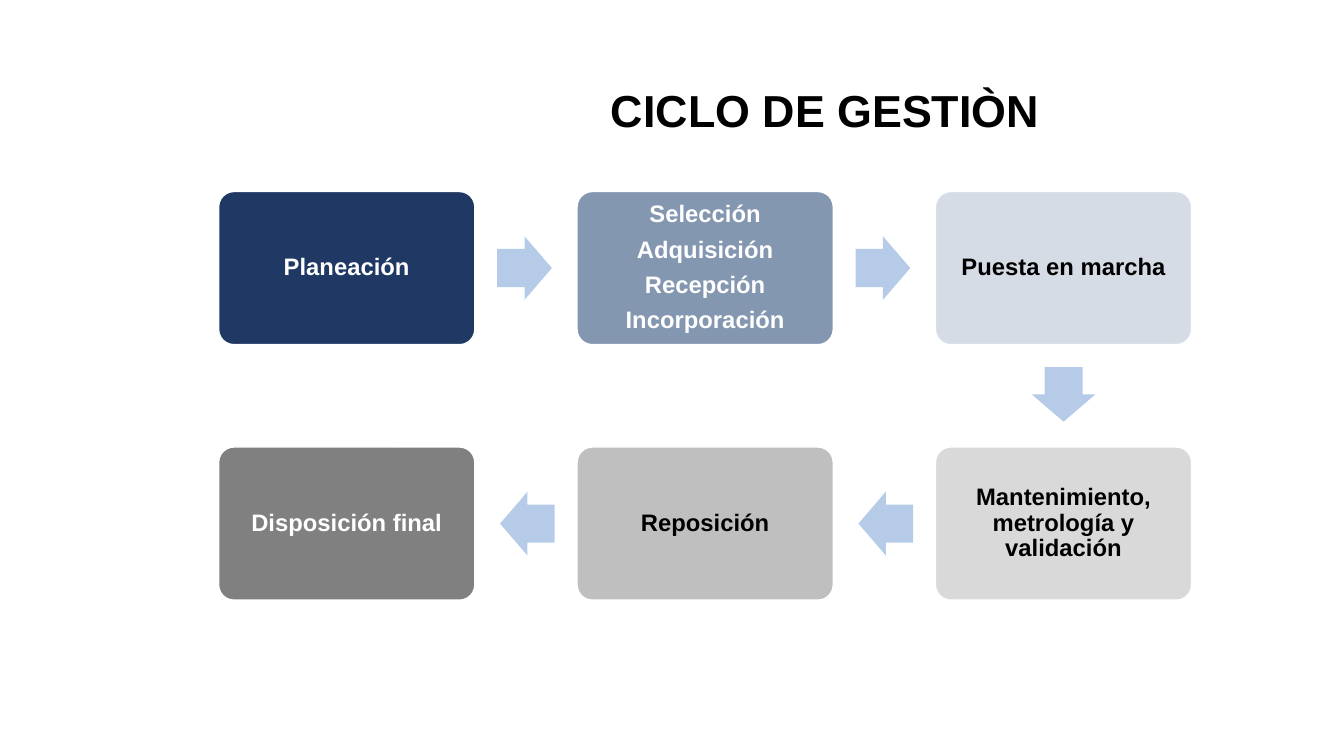
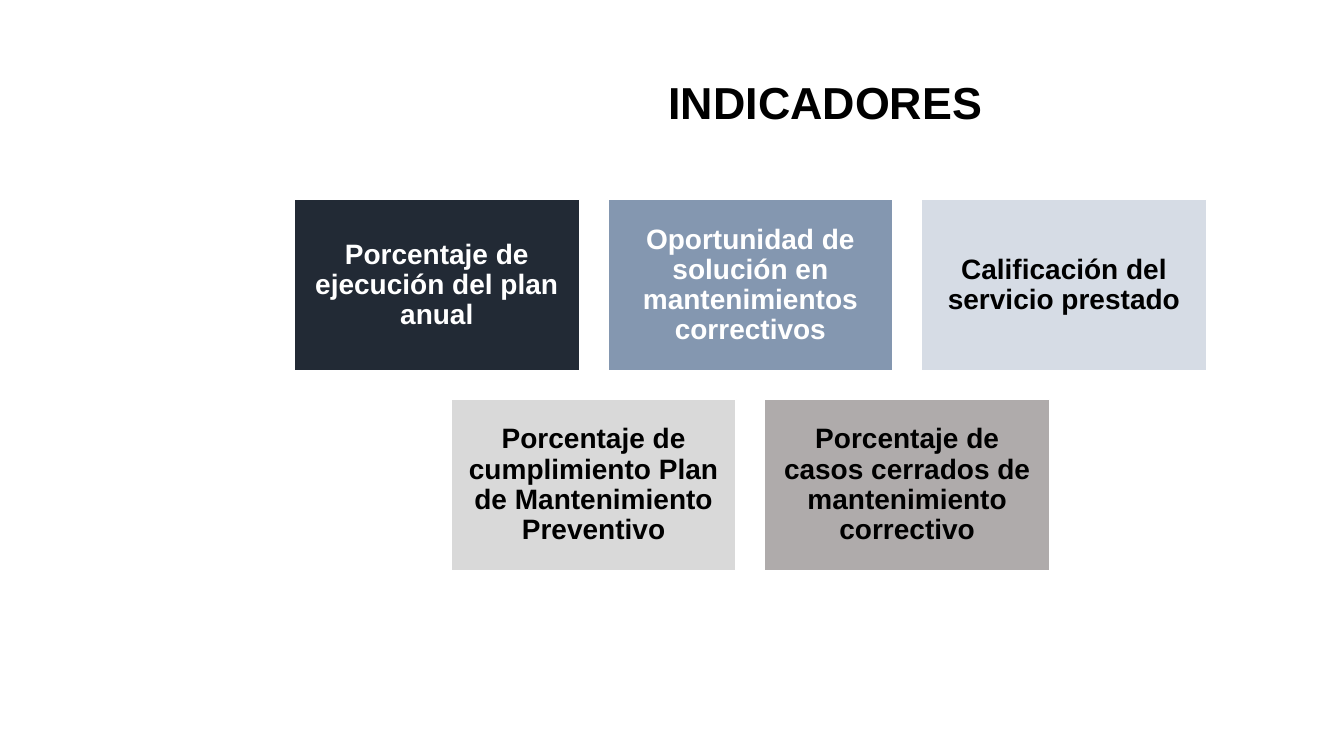
"""Builds two slides: the management cycle and its indicators."""
from math import atan2, degrees

from pptx import Presentation
from pptx.dml.color import RGBColor
from pptx.enum.shapes import MSO_SHAPE as SHAPE
from pptx.enum.text import MSO_ANCHOR as ANCHOR, MSO_AUTO_SIZE as AUTO_SIZE, PP_ALIGN as ALIGN
from pptx.util import Pt

FONT = "Arial"
BLACK, WHITE, ARROW_BLUE = "000000", "FFFFFF", "B5CBE7"
STEEL, PALE_BLUE, LIGHT_GRAY = "8497B0", "D6DCE5", "D9D9D9"

STEPS = [
    (["Planeación"], "203864", WHITE),
    (["Selección", "Adquisición", "Recepción", "Incorporación"], STEEL, WHITE),
    (["Puesta en marcha"], PALE_BLUE, BLACK),
    (["Mantenimiento, metrología y validación"], LIGHT_GRAY, BLACK),
    (["Reposición"], "BFBFBF", BLACK),
    (["Disposición final"], "808080", WHITE),
]
INDICATOR_ROWS = [
    [
        ("Porcentaje de ejecución del plan anual", "222A35", WHITE),
        ("Oportunidad de solución en mantenimientos correctivos", STEEL, WHITE),
        ("Calificación del servicio prestado", PALE_BLUE, BLACK),
    ],
    [
        ("Porcentaje de cumplimiento Plan de Mantenimiento Preventivo", LIGHT_GRAY, BLACK),
        ("Porcentaje de casos cerrados de mantenimiento correctivo", "AFABAB", BLACK),
    ],
]

STEP_W, STEP_H = 183, 109.4
STEP_LEFT, STEP_TOP = 156.2, 136.8
STEP_PITCH_X, STEP_PITCH_Y = 256, 182.5
STEP_COLUMNS = 3
ARROW_W, ARROW_H, ARROW_GAP = 39, 45.4, 16

CARD_W, CARD_H, CARD_GAP = 203.6, 122.4, 20.4
CARD_CENTER, CARD_TOP = 536, 142.6


def color(value):
    return RGBColor.from_string(value)


def write(frame, lines, size, ink, after=0):
    frame.word_wrap = True
    frame.auto_size = AUTO_SIZE.NONE
    frame.vertical_anchor = ANCHOR.MIDDLE
    for index, line in enumerate(lines):
        paragraph = frame.paragraphs[0] if index == 0 else frame.add_paragraph()
        paragraph.alignment = ALIGN.CENTER
        paragraph.line_spacing = 0.9
        paragraph.space_before = Pt(0)
        paragraph.space_after = Pt(after)
        run = paragraph.add_run()
        run.text = line
        run.font.name, run.font.size, run.font.bold = FONT, Pt(size), True
        run.font.color.rgb = color(ink)


def titled_slide(deck, heading, left, top, width):
    slide = deck.slides.add_slide(deck.slide_layouts[5])
    title = slide.shapes.title
    title.left, title.top, title.width, title.height = Pt(left), Pt(top), Pt(width), Pt(104.4)
    write(title.text_frame, [heading], 32, BLACK)
    return slide


def add_filled(slide, kind, left, top, width, height, fill):
    shape = slide.shapes.add_shape(kind, Pt(left), Pt(top), Pt(width), Pt(height))
    shape.shadow.inherit = False
    shape.fill.solid()
    shape.fill.fore_color.rgb = color(fill)
    shape.line.fill.background()
    return shape


def add_box(slide, kind, area, fill, lines, size, ink, inset):
    box = add_filled(slide, kind, *area, fill)
    box.line.color.rgb = color(WHITE)
    box.line.width = Pt(1)
    frame = box.text_frame
    frame.margin_left = frame.margin_right = Pt(inset)
    frame.margin_top = frame.margin_bottom = Pt(inset)
    write(frame, lines, size, ink, after=round(size * 0.4, 1))
    return box


def step_center(index):
    row, column = divmod(index, STEP_COLUMNS)
    if row % 2:
        column = STEP_COLUMNS - 1 - column
    return (STEP_LEFT + STEP_W / 2 + column * STEP_PITCH_X,
            STEP_TOP + STEP_H / 2 + row * STEP_PITCH_Y)


def add_arrow(slide, start, end):
    dx = (end[0] - start[0]) / STEP_PITCH_X
    dy = (end[1] - start[1]) / STEP_PITCH_Y
    reach = ARROW_GAP + ARROW_W / 2
    x = start[0] + dx * (STEP_W / 2 + reach)
    y = start[1] + dy * (STEP_H / 2 + reach)
    arrow = add_filled(slide, SHAPE.RIGHT_ARROW, x - ARROW_W / 2, y - ARROW_H / 2,
                       ARROW_W, ARROW_H, ARROW_BLUE)
    arrow.adjustments[0], arrow.adjustments[1] = 0.6, 0.5
    arrow.rotation = round(degrees(atan2(dy, dx)))


def build_cycle(deck):
    slide = titled_slide(deck, "CICLO DE GESTIÒN", 285, 28.8, 609)
    for index, (lines, fill, ink) in enumerate(STEPS):
        x, y = step_center(index)
        area = (x - STEP_W / 2, y - STEP_H / 2, STEP_W, STEP_H)
        step = add_box(slide, SHAPE.ROUNDED_RECTANGLE, area, fill, lines, 17, ink, 8)
        step.adjustments[0] = 0.1
        if index + 1 < len(STEPS):
            add_arrow(slide, (x, y), step_center(index + 1))


def build_indicators(deck):
    slide = titled_slide(deck, "INDICADORES", 283.7, 23, 612)
    for row, cards in enumerate(INDICATOR_ROWS):
        row_width = len(cards) * (CARD_W + CARD_GAP) - CARD_GAP
        top = CARD_TOP + row * (CARD_H + CARD_GAP)
        for column, (label, fill, ink) in enumerate(cards):
            left = CARD_CENTER - row_width / 2 + column * (CARD_W + CARD_GAP)
            area = (left, top, CARD_W, CARD_H)
            add_box(slide, SHAPE.RECTANGLE, area, fill, [label], 20, ink, 6)


def main():
    deck = Presentation()
    deck.slide_width, deck.slide_height = Pt(960), Pt(540)
    build_cycle(deck)
    build_indicators(deck)
    deck.save("out.pptx")


if __name__ == "__main__":
    main()
